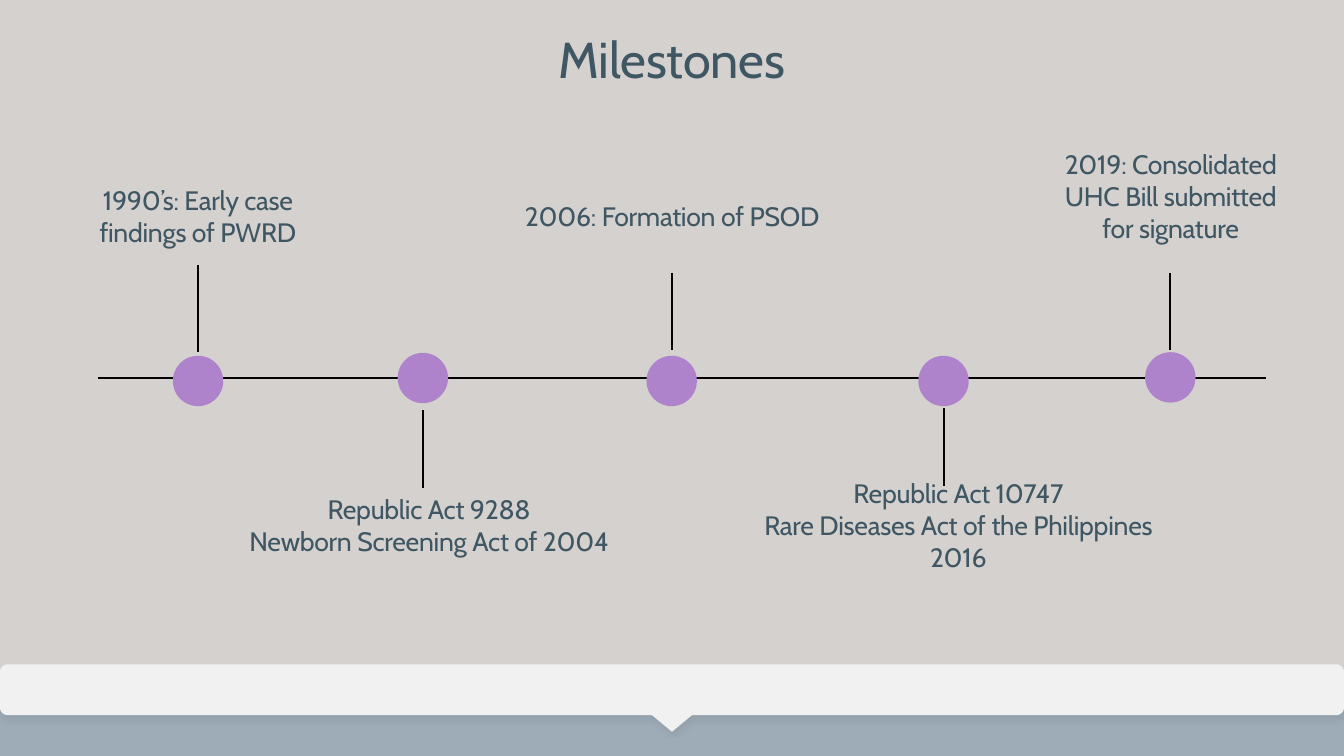
from dataclasses import dataclass
from math import cos, radians, sin

from lxml.etree import SubElement
from pptx import Presentation
from pptx.dml.color import RGBColor
from pptx.enum.shapes import MSO_CONNECTOR, MSO_SHAPE
from pptx.enum.text import MSO_ANCHOR, PP_ALIGN
from pptx.oxml import parse_xml
from pptx.oxml.ns import nsdecls, qn
from pptx.util import Cm, Pt


@dataclass(frozen=True)
class Theme:
    font: str = "Cabin"
    background: RGBColor = RGBColor.from_string("D4D1CF")
    footer: RGBColor = RGBColor.from_string("9EACB8")
    banner: RGBColor = RGBColor.from_string("F1F1F1")
    marker: RGBColor = RGBColor.from_string("AF82CC")
    line: RGBColor = RGBColor.from_string("000000")
    text: RGBColor = RGBColor.from_string("3F5663")
    title_size: int = 72
    label_size: int = 38
    line_width: int = 3


theme = Theme()
WIDTH, HEIGHT = 67.73, 38.1

deck = Presentation()
deck.slide_width, deck.slide_height = Cm(WIDTH), Cm(HEIGHT)
slide = deck.slides.add_slide(deck.slide_layouts[6])
slide.background.fill.solid()
slide.background.fill.fore_color.rgb = theme.background


def add_text(text, left, top, width, height, size=theme.label_size, wrap=True, spacing=None):
    box = slide.shapes.add_textbox(Cm(left), Cm(top), Cm(width), Cm(height))
    frame = box.text_frame
    frame.word_wrap = wrap
    frame.vertical_anchor = MSO_ANCHOR.MIDDLE
    frame.margin_left = frame.margin_right = frame.margin_top = frame.margin_bottom = Cm(0.15)
    for index, line in enumerate(text.split("\n")):
        para = frame.add_paragraph() if index else frame.paragraphs[0]
        para.alignment = PP_ALIGN.CENTER
        if spacing:
            para.line_spacing = spacing
        span = para.add_run()
        span.text = line
        span.font.name = theme.font
        span.font.size = Pt(size)
        span.font.color.rgb = theme.text
        span._r.get_or_add_rPr().set("spc", "-40")


def add_line(start_x, start_y, end_x, end_y):
    line = slide.shapes.add_connector(
        MSO_CONNECTOR.STRAIGHT, Cm(start_x), Cm(start_y), Cm(end_x), Cm(end_y))
    line.line.color.rgb = theme.line
    line.line.width = Pt(theme.line_width)
    SubElement(line._element.spPr, qn("a:effectLst"))


# Footer band
footer = slide.shapes.add_shape(MSO_SHAPE.RECTANGLE, 0, Cm(35.38), Cm(WIDTH), Cm(2.72))
footer.shadow.inherit = False
footer.fill.solid()
footer.fill.fore_color.rgb = theme.footer
footer.line.fill.background()

# Rounded banner with a pointer in the middle of its lower edge
banner_top, banner_bottom, radius = 33.48, 36.04, 0.38
middle, pointer_half, pointer_tip = WIDTH / 2, 1.01, 36.88
corners = [
    (WIDTH - radius, banner_top + radius, 270),
    (WIDTH - radius, banner_bottom - radius, 0),
    (radius, banner_bottom - radius, 90),
    (radius, banner_top + radius, 180),
]
outline = []
for center_x, center_y, start in corners:
    if start == 90:
        outline += [(middle + pointer_half, banner_bottom), (middle, pointer_tip),
                    (middle - pointer_half, banner_bottom)]
    outline += [(center_x + radius * cos(radians(start + step)),
                 center_y + radius * sin(radians(start + step))) for step in range(0, 91, 15)]
points = [(Cm(x), Cm(y)) for x, y in outline]
builder = slide.shapes.build_freeform(*points[0])
builder.add_line_segments(points[1:], close=True)
banner = builder.convert_to_shape()
banner.fill.solid()
banner.fill.fore_color.rgb = theme.banner
banner.line.fill.background()
banner._element.spPr.append(parse_xml(
    f'<a:effectLst {nsdecls("a")}><a:outerShdw blurRad="{Pt(4)}" dist="{Pt(4)}" dir="5400000">'
    '<a:srgbClr val="000000"><a:alpha val="5000"/></a:srgbClr></a:outerShdw></a:effectLst>'))

# Timeline: marker centre, stem top and bottom, label and its box
add_line(4.93, 19.05, 63.78, 19.05)
marker_size = 2.54
milestones = [
    (9.98, 19.2, 13.36, 17.75, "1990’s: Early case findings of PWRD",
     (3.76, 8.43, 12.42, 4.93)),
    (21.31, 19.05, 20.68, 24.59, "Republic Act 9288\nNewborn Screening Act of 2004",
     (12.01, 24.69, 19.23, 3.53)),
    (33.85, 19.2, 13.74, 17.63, "2006: Formation of PSOD",
     (25.55, 9.25, 16.64, 3.3)),
    (47.55, 19.2, 20.57, 24.49,
     "Republic Act 10747\nRare Diseases Act of the Philippines\n2016",
     (37.62, 23.88, 21.36, 5.16)),
    (58.98, 19.02, 13.74, 17.63, "2019: Consolidated UHC Bill submitted for signature",
     (53.24, 6.58, 11.51, 6.55)),
]
for center_x, center_y, stem_top, stem_bottom, label, label_box in milestones:
    marker = slide.shapes.add_shape(
        MSO_SHAPE.OVAL, Cm(center_x - marker_size / 2), Cm(center_y - marker_size / 2),
        Cm(marker_size), Cm(marker_size))
    marker.shadow.inherit = False
    marker.fill.solid()
    marker.fill.fore_color.rgb = theme.marker
    marker.line.fill.background()
    add_line(center_x, stem_top, center_x, stem_bottom)
    add_text(label, *label_box)

add_text("Milestones", 27.64, -0.33, 12.45, 5.66,
         size=theme.title_size, wrap=False, spacing=1.3)

deck.save("out.pptx")
